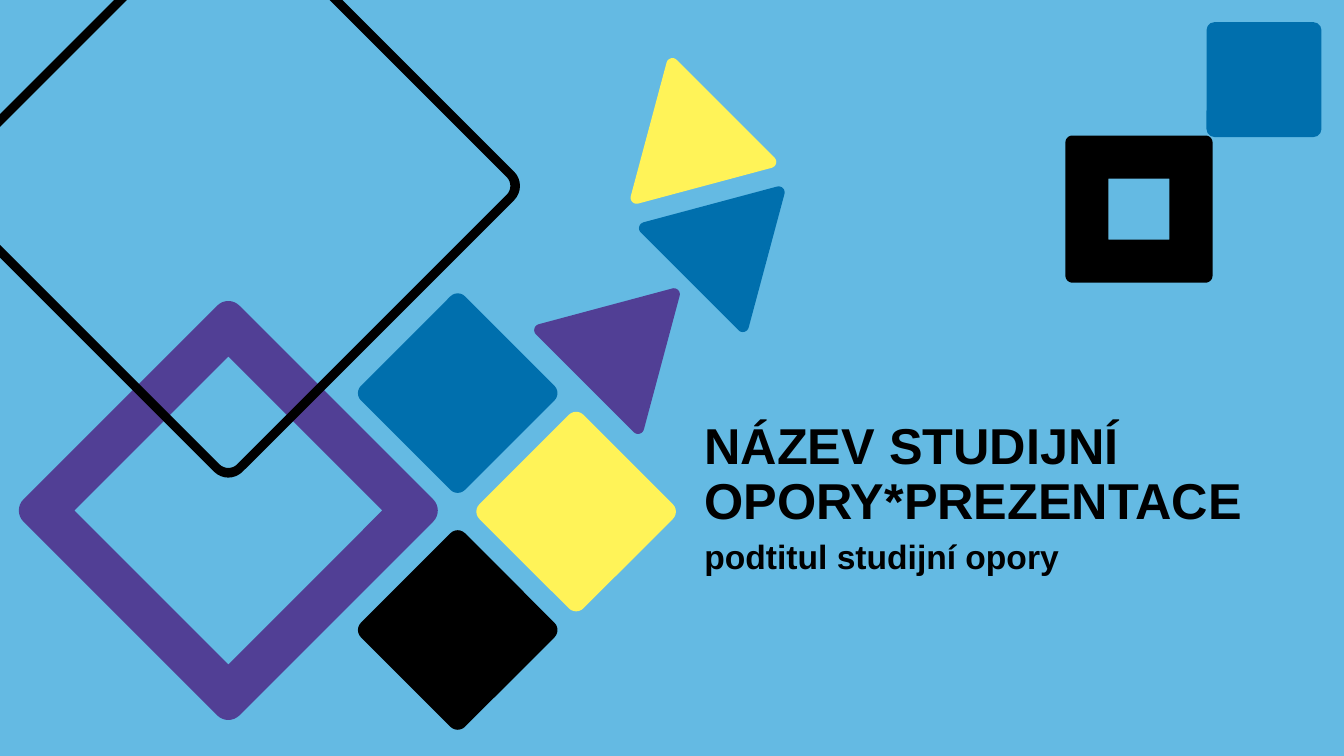
from dataclasses import dataclass
from itertools import product
from math import atan2, cos, dist, hypot, pi, radians, remainder, sin, sqrt, tau

from pptx import Presentation
from pptx.dml.color import RGBColor
from pptx.enum.shapes import MSO_SHAPE as Preset
from pptx.enum.text import MSO_ANCHOR as Anchor, MSO_AUTO_SIZE as AutoSize
from pptx.util import Emu, Pt

SLIDE_WIDTH, SLIDE_HEIGHT = 12192000, 6858000
COLUMNS, ROWS = 160, 90
CELL = SLIDE_WIDTH // COLUMNS
COLORS = {"sky": "64BAE3", "blue": "006FAD", "purple": "513F95",
          "yellow": "FFF358", "black": "000000"}
FONT = {"name": "Arial", "bold": True}
ARC_STEPS = 8

Point = tuple[float, float]
Contour = list[Point]


@dataclass
class Tile:
    column: float
    row: float
    width: float
    height: float
    color: str
    roundness: float = 0
    rotation: float = 0


@dataclass
class Outline:
    """Contours around a centre, before the rotation is applied."""
    column: float
    row: float
    contours: list[Contour]
    color: str
    rotation: float = 0


@dataclass
class Label:
    text: str
    column: float
    row: float
    width: float
    height: float
    size: float
    frame_format: dict
    paragraph_format: dict


def cells(count: float) -> Emu:
    return Emu(round(count * CELL))


def rounded(corners: Contour, radius: float, ends_cut: bool = False) -> Contour:
    """Replace corners by arcs; with ends_cut the first and last stay sharp."""
    points: Contour = []
    last = len(corners) - 1
    for index, (x, y) in enumerate(corners):
        if ends_cut and index in (0, last):
            points.append((x, y))
            continue
        sides = []
        for neighbor in (corners[index - 1], corners[(index + 1) % len(corners)]):
            length = dist(neighbor, (x, y))
            sides.append(((neighbor[0] - x) / length, (neighbor[1] - y) / length))
        (ax, ay), (bx, by) = sides
        bisector = hypot(ax + bx, ay + by)
        cosine = bisector / 2
        sine = sqrt(1 - cosine ** 2)
        reach, tangent = radius / sine, radius * cosine / sine
        center_x = x + (ax + bx) / bisector * reach
        center_y = y + (ay + by) / bisector * reach
        start, end = (atan2(y + dy * tangent - center_y, x + dx * tangent - center_x)
                      for dx, dy in sides)
        sweep = remainder(end - start, tau)
        for step in range(ARC_STEPS + 1):
            angle = start + sweep * step / ARC_STEPS
            points.append((center_x + radius * cos(angle),
                           center_y + radius * sin(angle)))
    return points


def square(side: float) -> Contour:
    half = side / 2
    return [(-half, -half), (half, -half), (half, half), (-half, half)]


def triangle(side: float, radius: float) -> Contour:
    height = side * sin(pi / 3)
    return rounded([(0, 0), (side / 2, height), (-side / 2, height)], radius)


def frame(side: float, hole: float, radius: float) -> list[Contour]:
    return [rounded(square(side), radius), square(hole)[::-1]]


def turned(points: Contour, degrees: float) -> Contour:
    angle = radians(degrees)
    return [(x * cos(angle) - y * sin(angle), x * sin(angle) + y * cos(angle))
            for x, y in points]


def cut_diamond(left: float, top: float, outer: float, inner: float,
                outer_radius: float, inner_radius: float) -> list[Contour]:
    """Diamond band that ends at the slide's left and top edges."""
    bands = [rounded([(half - top, -top), (half, 0), (0, half), (-left, half - left)],
                     radius, ends_cut=True)
             for half, radius in ((outer, outer_radius), (inner, inner_radius))]
    corner = [(top - outer, -top), (-left, left - outer),
              (-left, left - inner), (top - inner, -top)]
    return [turned(bands[0] + bands[1][::-1], -45), turned(corner, -45)]


def paint(shape, color: str) -> None:
    shape.shadow.inherit = False
    shape.fill.solid()
    shape.fill.fore_color.rgb = RGBColor.from_string(COLORS[color])
    shape.line.fill.background()


def draw_tile(slide, tile: Tile) -> None:
    preset = Preset.ROUNDED_RECTANGLE if tile.roundness else Preset.RECTANGLE
    shape = slide.shapes.add_shape(preset, *map(
        cells, (tile.column, tile.row, tile.width, tile.height)))
    if tile.roundness:
        shape.adjustments[0] = tile.roundness
    shape.rotation = tile.rotation
    paint(shape, tile.color)


def draw_outline(slide, outline: Outline) -> None:
    first, *others = [[(cells(x), cells(y)) for x, y in contour]
                      for contour in outline.contours]
    builder = slide.shapes.build_freeform(*first[0])
    builder.add_line_segments(first[1:])
    for contour in others:
        builder.move_to(*contour[0])
        builder.add_line_segments(contour[1:])
    shape = builder.convert_to_shape()
    shape.left = cells(outline.column) - shape.width // 2
    shape.top = cells(outline.row) - shape.height // 2
    shape.rotation = outline.rotation
    paint(shape, outline.color)


def set_attributes(target, values: dict) -> None:
    for name, value in values.items():
        setattr(target, name, value)


def draw_label(slide, label: Label) -> None:
    box = slide.shapes.add_textbox(*map(
        cells, (label.column, label.row, label.width, label.height)))
    text_frame = box.text_frame
    set_attributes(text_frame, {"word_wrap": True, "auto_size": AutoSize.SHAPE_TO_FIT_TEXT,
                                **label.frame_format})
    paragraph = text_frame.paragraphs[0]
    paragraph.text = label.text
    set_attributes(paragraph, {"line_spacing": 0.9, **label.paragraph_format})
    for run in paragraph.runs:
        set_attributes(run.font, {**FONT, "size": Pt(label.size)})
        run.font.color.rgb = RGBColor.from_string(COLORS["black"])


def diamond(column: float, row: float, color: str, side: float = 17.52) -> Tile:
    return Tile(column - side / 2, row - side / 2, side, side, color, 0.07, 135)


def arrow(column: float, row: float, color: str, rotation: float) -> Outline:
    return Outline(column, row, [triangle(18.96, 0.72)], color, rotation)


LABELS = [
    Label("NÁZEV STUDIJNÍ\vOPORY*PREZENTACE", 82.68, 49.44, 68.16, 14.28, 36,
          {"vertical_anchor": Anchor.BOTTOM}, {}),
    Label("podtitul studijní opory", 82.68, 63.72, 59.04, 5.52, 24,
          {}, {"space_before": Pt(10)}),
]
FIGURES = [
    Tile(143.64, 2.64, 13.68, 13.68, "blue", 0.07),
    Outline(135.6, 24.9, frame(17.52, 7.26, 0.84), "black"),
    arrow(75.18, 40.08, "purple", 45),
    diamond(54.48, 75, "black"),
    diamond(68.58, 60.9, "yellow"),
    diamond(54.48, 46.8, "blue"),
    Outline(27.18, 60.78, frame(36.36, 25.92, 1.86), "purple", 45),
    Outline(27.18, 22.14, cut_diamond(27.18, 22.14, 35.72, 34.2, 2.4, 1.5), "black", 45),
    arrow(86.58, 31.92, "blue", 165),
    arrow(81.9, 14.52, "yellow", 345),
]


def main() -> None:
    presentation = Presentation()
    set_attributes(presentation, {"slide_width": SLIDE_WIDTH, "slide_height": SLIDE_HEIGHT})
    slide = presentation.slides.add_slide(presentation.slide_layouts[6])
    draw_tile(slide, Tile(0, 0, COLUMNS, ROWS, "sky"))
    for label in LABELS:
        draw_label(slide, label)
    for figure in FIGURES:
        draw = draw_tile if isinstance(figure, Tile) else draw_outline
        draw(slide, figure)
    presentation.save("out.pptx")


if __name__ == "__main__":
    main()
